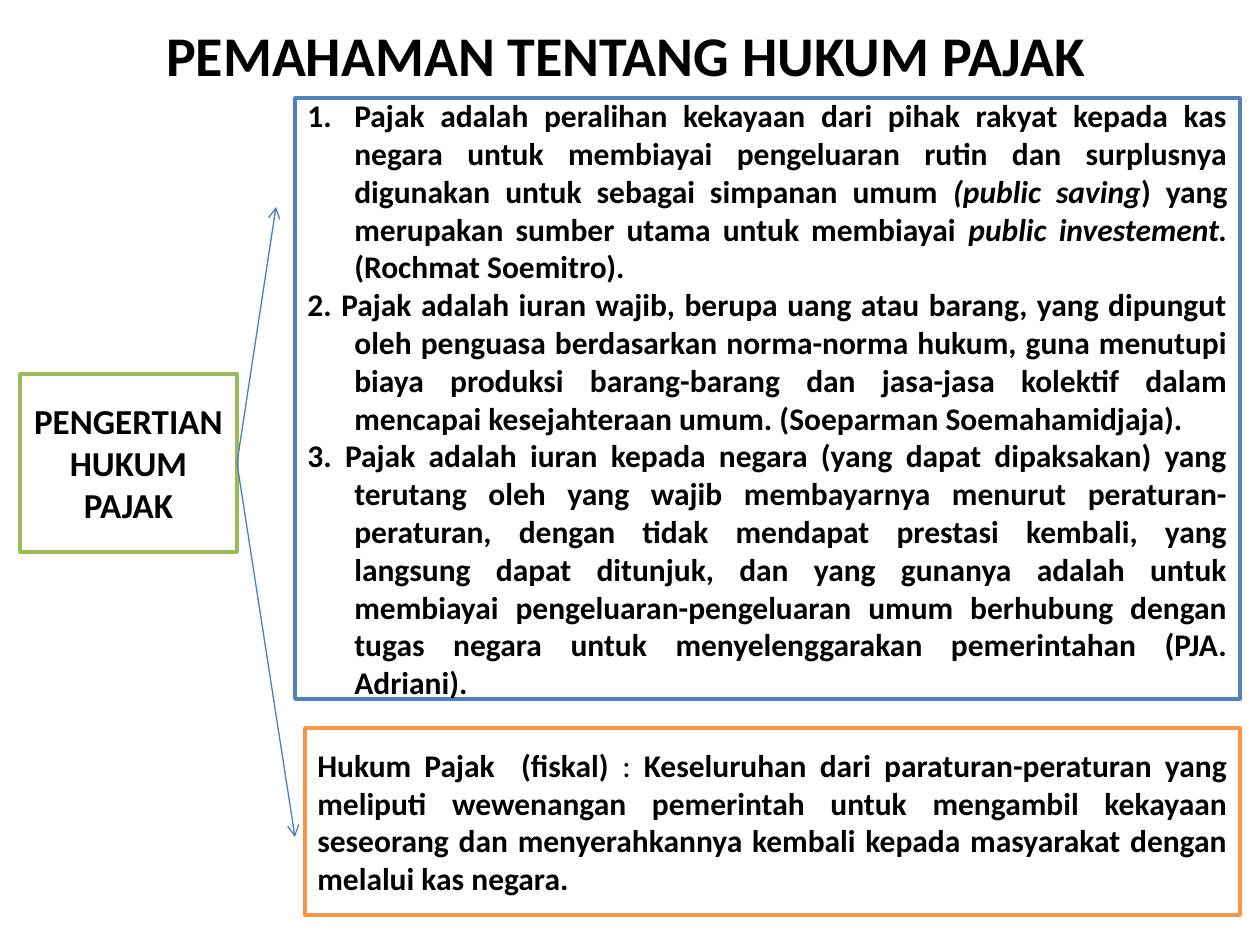
"""Build the slide on the understanding of tax law."""
from lxml import etree
from pptx import Presentation
from pptx.dml.color import RGBColor
from pptx.enum.shapes import MSO_CONNECTOR, MSO_SHAPE
from pptx.enum.text import MSO_ANCHOR, PP_ALIGN
from pptx.oxml.ns import qn
from pptx.util import Emu, Pt

SCALE = 914400 / 126
FONT = "Calibri"
BLACK = RGBColor(0x00, 0x00, 0x00)
WHITE = RGBColor(0xFF, 0xFF, 0xFF)
GREEN = RGBColor(0x9B, 0xBB, 0x59)
BLUE = RGBColor(0x4F, 0x81, 0xBD)
ORANGE = RGBColor(0xF7, 0x96, 0x46)
ARROW_BLUE = RGBColor(0x4B, 0x7E, 0xBC)
CENTER, JUSTIFY = PP_ALIGN.CENTER, PP_ALIGN.JUSTIFY
MIDDLE = MSO_ANCHOR.MIDDLE
RECTANGLE, STRAIGHT = MSO_SHAPE.RECTANGLE, MSO_CONNECTOR.STRAIGHT
RIGHT_SIDE = 3
HANGING = 47

BOLD, ITALIC, PLAIN = (True, False), (True, True), (False, False)

TITLE = [[("PEMAHAMAN TENTANG HUKUM PAJAK", BOLD)]]
TERM = [[("PENGERTIAN HUKUM PAJAK", BOLD)]]
DEFINITIONS = [
    [
        ("Pajak adalah peralihan kekayaan dari pihak rakyat kepada kas negara "
         "untuk membiayai pengeluaran rutin dan surplusnya digunakan untuk "
         "sebagai simpanan umum ", BOLD),
        ("(public saving", ITALIC),
        (") yang merupakan sumber utama untuk membiayai ", BOLD),
        ("public investement. ", ITALIC),
        ("(Rochmat Soemitro).", BOLD),
    ],
    [("2. Pajak adalah iuran wajib, berupa uang atau barang, yang dipungut "
      "oleh penguasa berdasarkan norma-norma hukum, guna menutupi biaya "
      "produksi barang-barang dan jasa-jasa kolektif dalam mencapai "
      "kesejahteraan umum. (Soeparman Soemahamidjaja).", BOLD)],
    [("3. Pajak adalah iuran kepada negara (yang dapat dipaksakan) yang "
      "terutang oleh yang wajib membayarnya menurut peraturan-peraturan, "
      "dengan tidak mendapat prestasi kembali, yang langsung dapat ditunjuk, "
      "dan yang gunanya adalah untuk membiayai pengeluaran-pengeluaran umum "
      "berhubung dengan tugas negara untuk menyelenggarakan pemerintahan "
      "(PJA. Adriani).", BOLD)],
]
FISCAL_LAW = [[
    ("Hukum Pajak  (fiskal) ", BOLD),
    (": ", PLAIN),
    ("Keseluruhan dari paraturan-peraturan yang meliputi wewenangan "
     "pemerintah untuk mengambil kekayaan seseorang dan menyerahkannya "
     "kembali kepada masyarakat dengan melalui kas negara.", BOLD),
]]


def px(*lengths):
    """Turn pixel lengths into EMU."""
    return [Emu(round(length * SCALE)) for length in lengths]


def write_text(box, paragraphs, size, align):
    """Fill a box with paragraphs, run by run."""
    frame = box.text_frame
    frame.word_wrap = True
    frame.vertical_anchor = MIDDLE
    for index, spans in enumerate(paragraphs):
        para = frame.add_paragraph() if index else frame.paragraphs[0]
        para.alignment = align
        for text, (bold, italic) in spans:
            span = para.add_run()
            span.text = text
            font = span.font
            font.name, font.size = FONT, Pt(size)
            font.bold, font.italic = bold, italic
            font.color.rgb = BLACK


def add_title(page, place, paragraphs):
    """Add the centred heading."""
    write_text(page.shapes.add_textbox(*px(*place)), paragraphs, 32, CENTER)


def add_box(page, place, color, paragraphs, size, align):
    """Add a white rectangle with a coloured outline and text."""
    box = page.shapes.add_shape(RECTANGLE, *px(*place))
    box.shadow.inherit = False
    box.fill.solid()
    box.fill.fore_color.rgb = WHITE
    box.line.color.rgb = color
    box.line.width = Pt(2)
    write_text(box, paragraphs, size, align)
    return box


def hang_list(box):
    """Hang every paragraph and number the first one automatically."""
    indent = px(HANGING)[0]
    for para in box.text_frame.paragraphs:
        properties = para._p.get_or_add_pPr()
        properties.set("marL", str(indent))
        properties.set("indent", str(-indent))
    first = box.text_frame.paragraphs[0]._p.get_or_add_pPr()
    etree.SubElement(first, qn("a:buFont"), typeface="+mj-lt")
    etree.SubElement(first, qn("a:buAutoNum"), type="arabicPeriod")


def add_arrow(page, source, end):
    """Add an open arrow from the right side of a box to a point."""
    arrow = page.shapes.add_connector(STRAIGHT, 0, 0, *px(*end))
    arrow.begin_connect(source, RIGHT_SIDE)
    arrow.line.color.rgb = ARROW_BLUE
    arrow.line.width = Pt(0.75)
    etree.SubElement(arrow.line._get_or_add_ln(), qn("a:tailEnd"), type="arrow")
    etree.SubElement(arrow._element.spPr, qn("a:effectLst"))


def main():
    """Build and save the deck."""
    deck = Presentation()
    deck.slide_width, deck.slide_height = px(1260, 945)
    page = deck.slides.add_slide(deck.slide_layouts[6])
    add_title(page, (59, 0, 1134, 108), TITLE)
    term = add_box(page, (20, 374, 217, 178), GREEN, TERM, 20, CENTER)
    for end in ((276, 207), (295, 837)):
        add_arrow(page, term, end)
    definitions = add_box(page, (295, 98, 945, 601), BLUE, DEFINITIONS, 18, JUSTIFY)
    hang_list(definitions)
    add_box(page, (305, 728, 935, 187), ORANGE, FISCAL_LAW, 18, JUSTIFY)
    deck.save("out.pptx")


if __name__ == "__main__":
    main()
